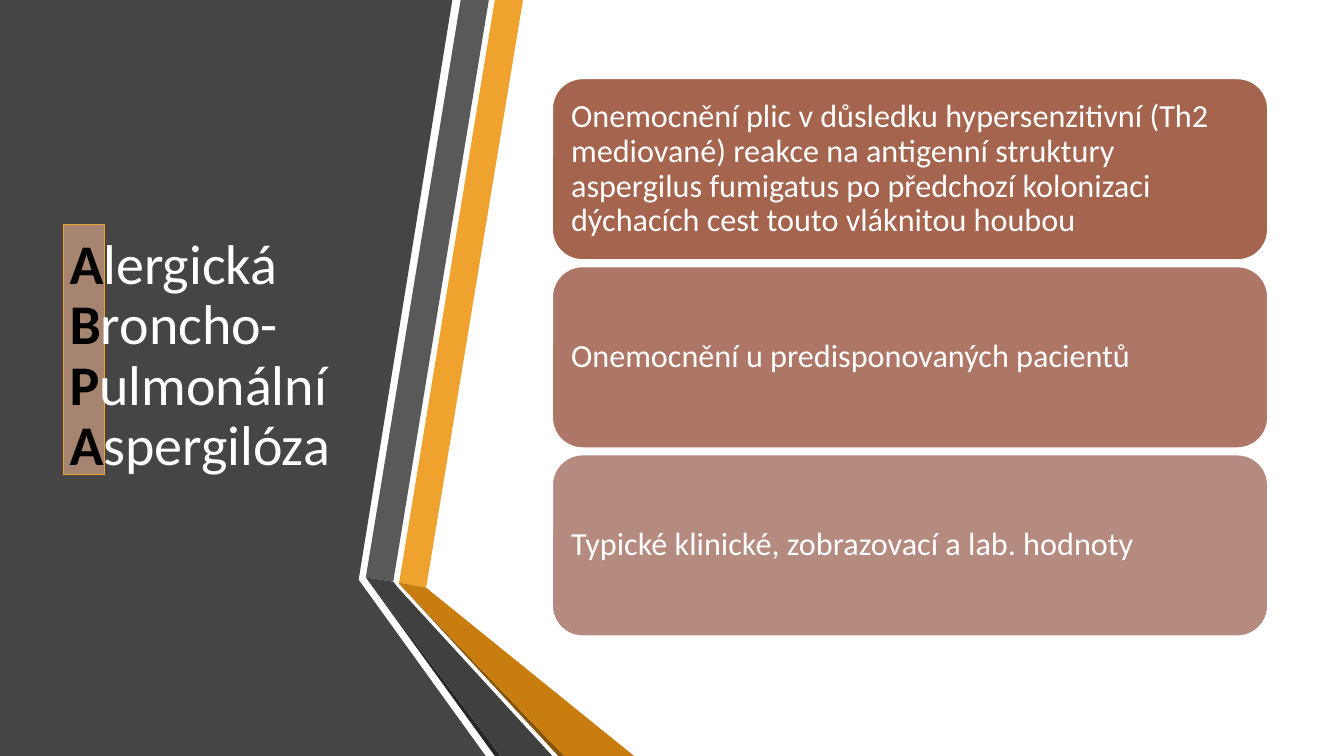
from dataclasses import dataclass

from pptx import Presentation
from pptx import util as u
from pptx.dml.color import RGBColor
from pptx.enum import shapes, text


@dataclass(frozen=True)
class Theme:
    font: str = "Calibri"
    title_size: int = 40
    body_size: int = 23
    light: str = "FFFFFF"
    dark: str = "000000"
    panel: str = "454545"
    amber: str = "F0A22E"
    amber_fold: str = "C87D0E"
    amber_edge: str = "85540A"
    grey: str = "595959"
    grey_fold: str = "404040"
    grey_edge: str = "262626"
    highlight: str = "A78470"
    cards: tuple = ("A5644E", "AE7666", "B58B80")


def add_span(para, words, *, font, size, color, bold=False):
    span = para.add_run()
    span.text = words
    span.font.name = font
    span.font.size = u.Pt(size)
    span.font.bold = bold
    span.font.color.rgb = RGBColor.from_string(color)
    return span


class SlideBuilder:
    def __init__(self, deck, theme):
        self.theme = theme
        self.page = deck.slides.add_slide(deck.slide_layouts[5])

    def paint(self, shape, fill, line=None, width=1):
        shape.shadow.inherit = False
        shape.fill.solid()
        shape.fill.fore_color.rgb = RGBColor.from_string(fill)
        if line is None:
            shape.line.fill.background()
        else:
            shape.line.color.rgb = RGBColor.from_string(line)
            shape.line.width = u.Pt(width)

    def polygon(self, points, fill):
        corners = [(u.Cm(x), u.Cm(y)) for x, y in points]
        builder = self.page.shapes.build_freeform(*corners[0])
        builder.add_line_segments(corners[1:], close=True)
        self.paint(builder.convert_to_shape(), fill)

    def box(self, kind, left, top, width, height, fill, line, line_width):
        box = self.page.shapes.add_shape(
            kind, u.Cm(left), u.Cm(top), u.Cm(width), u.Cm(height))
        self.paint(box, fill, line, line_width)
        return box

    def first_para(self, frame):
        frame.word_wrap = True
        frame.auto_size = text.MSO_AUTO_SIZE.NONE
        frame.vertical_anchor = text.MSO_ANCHOR.MIDDLE
        para = frame.paragraphs[0]
        para.alignment = text.PP_ALIGN.LEFT
        para.line_spacing = 0.9
        return para

    def title(self, words, left, top, width, height):
        theme = self.theme
        title = self.page.shapes.title
        self.page.shapes._spTree.append(title._element)
        title.left, title.top = u.Cm(left), u.Cm(top)
        title.width, title.height = u.Cm(width), u.Cm(height)
        para = self.first_para(title.text_frame)
        for index, word in enumerate(words):
            if index:
                para.add_line_break()
            add_span(para, word[0], font=theme.font, size=theme.title_size,
                     color=theme.dark, bold=True)
            add_span(para, word[1:], font=theme.font, size=theme.title_size,
                     color=theme.light)

    def card(self, words, left, top, width, height, fill):
        theme = self.theme
        card = self.box(shapes.MSO_SHAPE.ROUNDED_RECTANGLE, left, top, width,
                        height, fill, theme.light, 1)
        frame = card.text_frame
        frame.margin_left = frame.margin_right = u.Cm(0.25)
        frame.margin_top = frame.margin_bottom = u.Cm(0.25)
        add_span(self.first_para(frame), words, font=theme.font,
                 size=theme.body_size, color=theme.light)


def main():
    deck = Presentation()
    deck.slide_width, deck.slide_height = u.Cm(33.87), u.Cm(19.05)
    theme = Theme()
    slide = SlideBuilder(deck, theme)
    bottom = 19.05

    slide.polygon([(0, 0), (11.4, 0), (9.04, 14.61), (12.24, bottom),
                   (0, bottom)], theme.panel)
    slide.box(shapes.MSO_SHAPE.RECTANGLE, 1.6, 5.66, 1.04, 6.3,
              theme.highlight, theme.amber, 0.5)

    ribbons = [
        (theme.amber, [(10.06, 14.68), (10.74, 14.81), (13.18, 0), (12.47, 0)]),
        (theme.grey, [(12.32, 0), (11.61, 0), (9.22, 14.55), (9.91, 14.66)]),
        (theme.grey_edge, [(9.22, 14.55), (12.47, bottom), (12.62, bottom)]),
        (theme.amber_edge, [(10.06, 14.71), (14.07, bottom), (14.22, bottom)]),
        (theme.amber_fold, [(10.06, 14.71), (14.22, bottom), (15.98, bottom),
                            (10.74, 14.81), (10.06, 14.68)]),
        (theme.grey_fold, [(13.92, bottom), (10.03, 14.81), (9.91, 14.66),
                           (9.22, 14.55), (12.62, bottom)]),
    ]
    for fill, points in ribbons:
        slide.polygon(points, fill)

    slide.title(["Alergická", "Broncho-", "Pulmonální", "Aspergilóza"],
                1.5, 1.91, 7.72, 14.17)

    facts = [
        "Onemocnění plic v důsledku hypersenzitivní (Th2 mediované) reakce na "
        "antigenní struktury aspergilus fumigatus po předchozí kolonizaci "
        "dýchacích cest touto vláknitou houbou",
        "Onemocnění u predisponovaných pacientů",
        "Typické klinické, zobrazovací a lab. hodnoty",
    ]
    for index, (fact, fill) in enumerate(zip(facts, theme.cards)):
        slide.card(fact, 13.92, 1.98 + index * 4.74, 18.03, 4.57, fill)

    deck.save("out.pptx")


if __name__ == "__main__":
    main()
